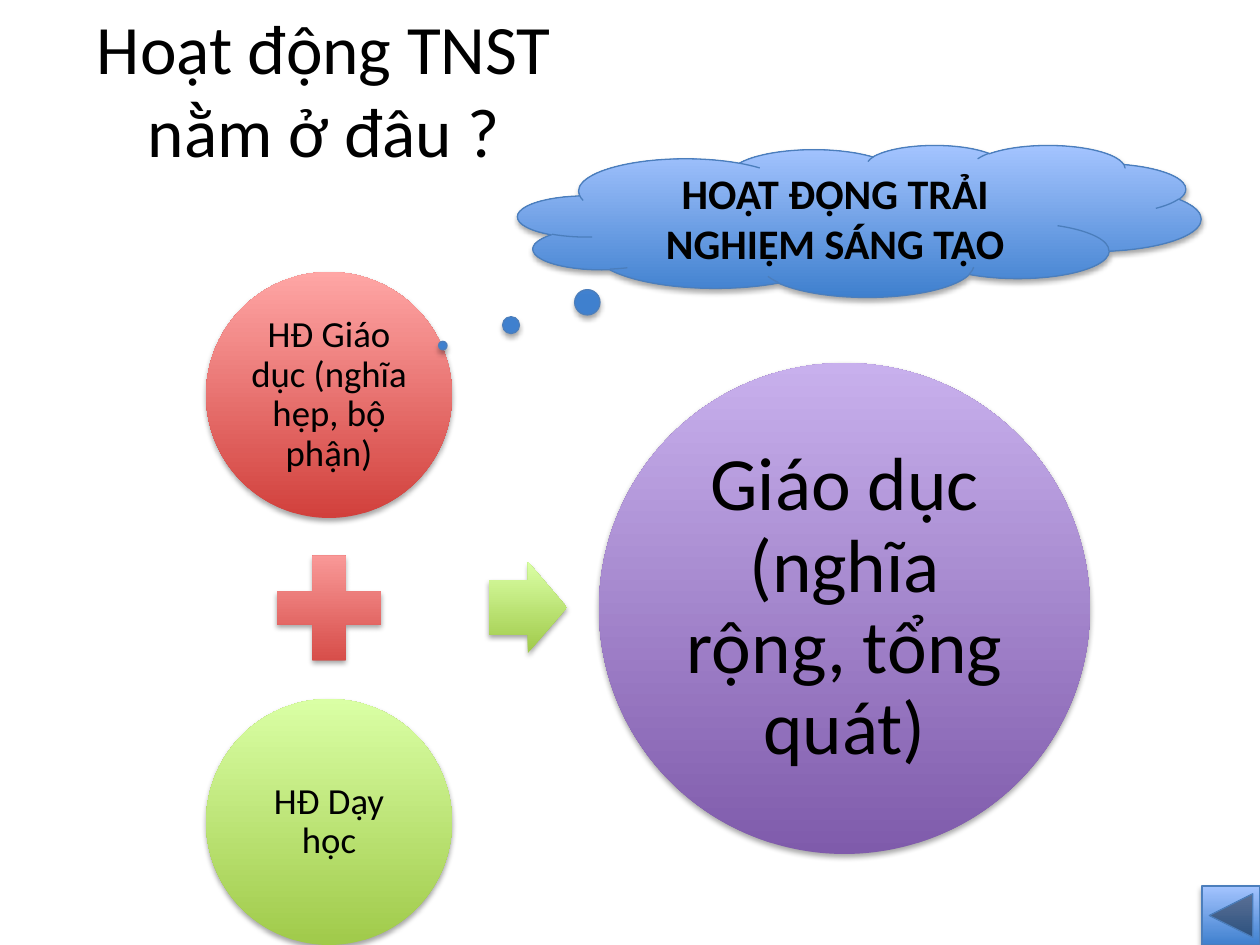
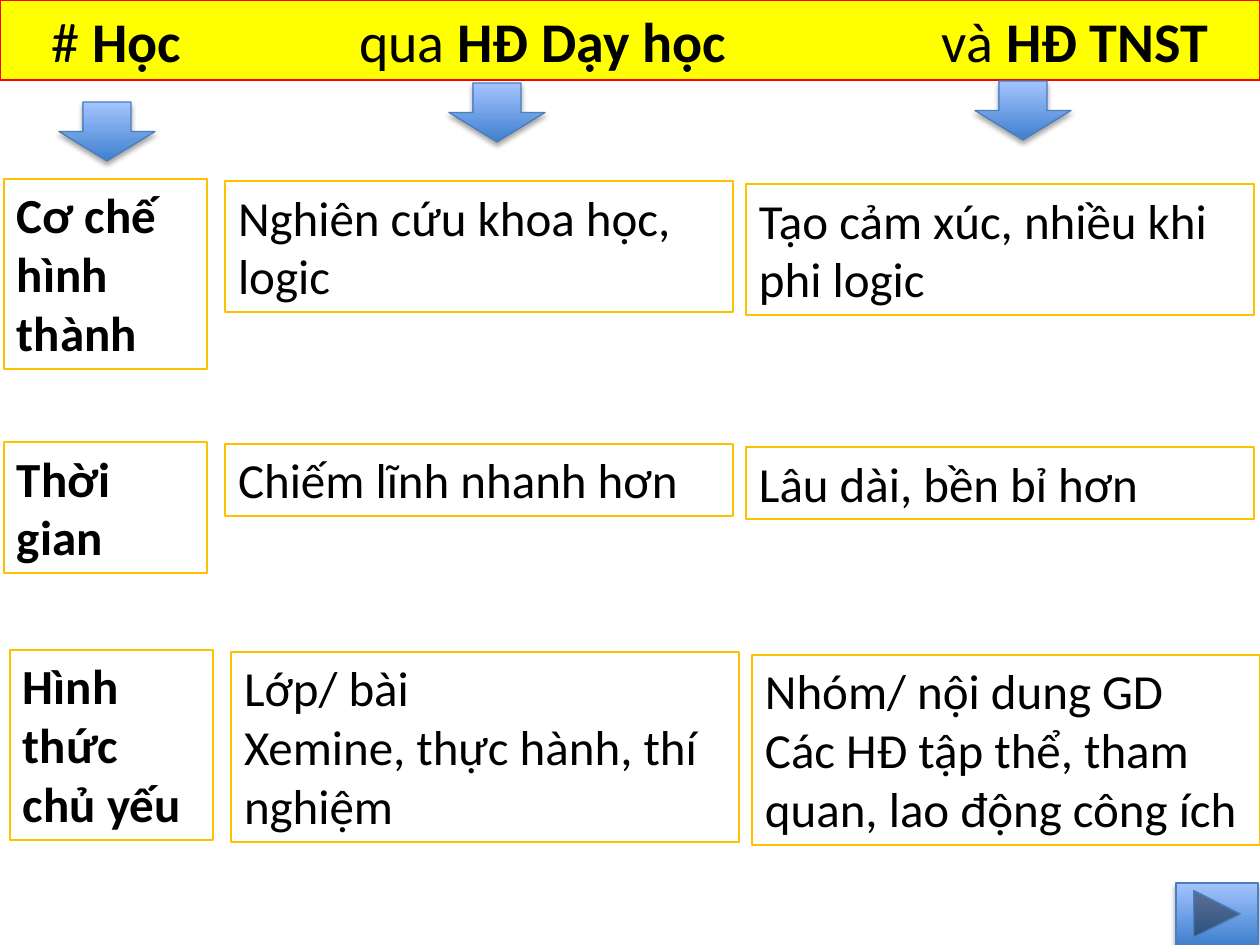
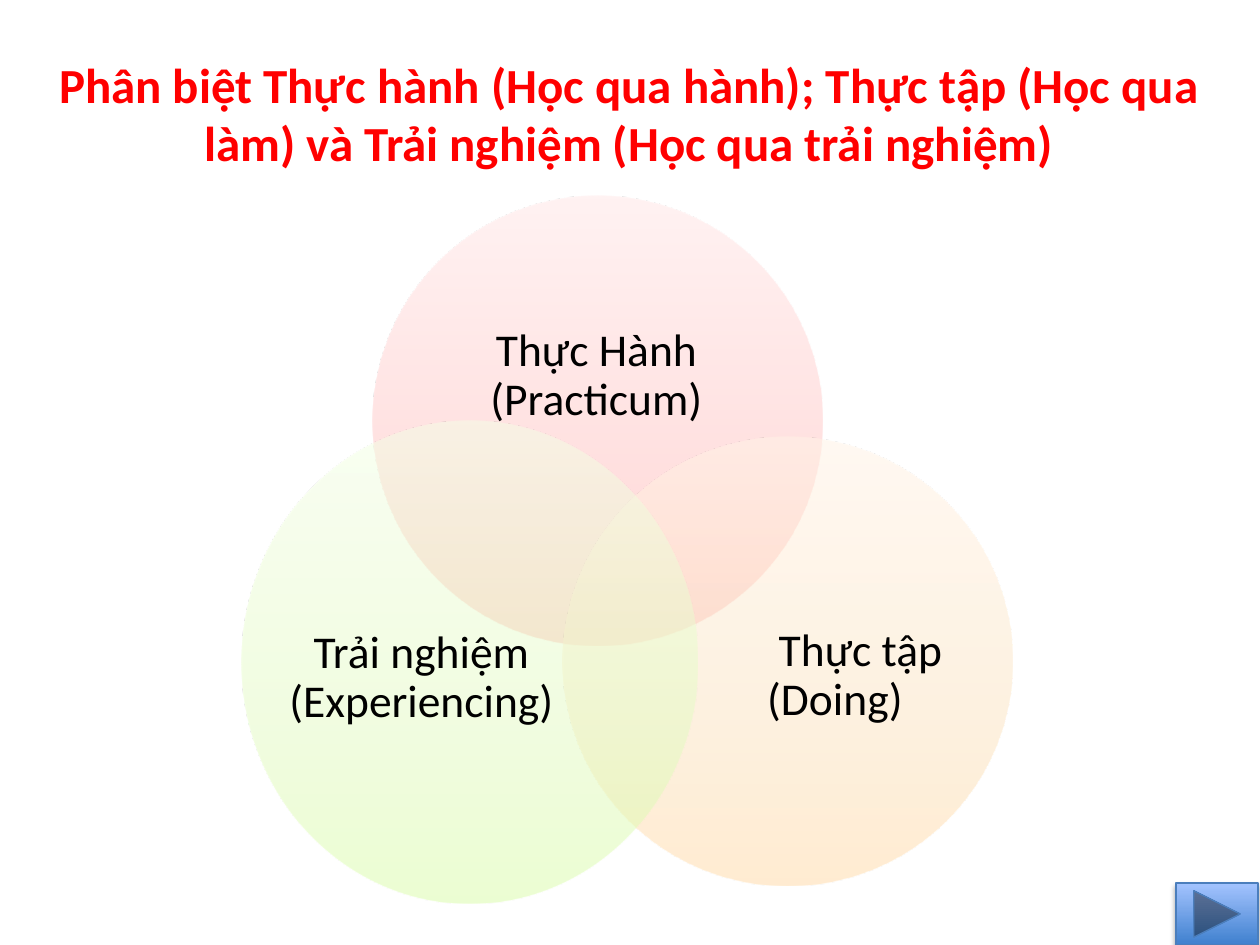
from lxml.etree import SubElement as Sub
from pptx import Presentation
from pptx.dml.color import RGBColor
from pptx.enum.shapes import MSO_SHAPE as Geo
from pptx.enum.text import MSO_ANCHOR as Anchor, MSO_AUTO_SIZE as Fit, PP_ALIGN as Align
from pptx.oxml.ns import qn
from pptx.util import Emu, Pt

COLORS = {
    "text": "000000", "red": "FF0000", "yellow": "FFFF00", "gold": "FFC000",
    "edge": "4B7EBC", "shade": "000000",
}
# Gradient stops run from the bottom of a shape to its top
GRADES = {
    "blue": ("3F80CE", "A4C4FF"),
    "red": ("D1403C", "FFA6A5"),
    "green": ("A0CA4A", "DAFFA5"),
    "violet": ("7F5BAB", "C8B0ED"),
    "pale red": ("FFA6A5", "FFC0BF", "FFE7E7"),
    "pale gold": ("FFDAA5", "FEE4C0", "FFF4E7"),
    "pale green": ("DAFDA7", "E4FCC2", "F5FFE7"),
}
FONT = "Calibri"
PAD = (13, 6, 13, 6)


def px(num):
    return Emu(round(num * 914400 / 126))


def rgb(name):
    return RGBColor.from_string(COLORS[name])


class Deck:
    def __init__(self):
        self.prs = Presentation()
        self.prs.slide_width, self.prs.slide_height = px(1260), px(945)
        self.slide = None

    def page(self):
        self.slide = self.prs.slides.add_slide(self.prs.slide_layouts[5])

    def fill_text(self, item, paras, size, color="text", align=Align.CENTER,
                  anchor=Anchor.MIDDLE, pad=PAD, space=1.0, indent=0, tabs=()):
        """Each paragraph is a list of (text, bold) runs."""
        frame = item.text_frame
        frame.word_wrap, frame.auto_size = True, Fit.NONE
        frame.vertical_anchor = anchor
        (frame.margin_left, frame.margin_top,
         frame.margin_right, frame.margin_bottom) = map(px, pad)
        for num, runs in enumerate(paras):
            para = frame.add_paragraph() if num else frame.paragraphs[0]
            para.alignment, para.line_spacing = align, space
            props = para._p.get_or_add_pPr()
            if indent:
                props.set("marL", "0")
                props.set("indent", str(px(indent)))
            if tabs:
                stops = Sub(props, qn("a:tabLst"))
                for pos in tabs:
                    Sub(stops, qn("a:tab"), pos=str(px(pos)), algn="l")
            for text, bold in runs:
                run = para.add_run()
                run.text = text
                font = run.font
                font.name, font.size, font.bold = FONT, Pt(size), bold
                font.color.rgb = rgb(color)

    def title(self, box, runs, size, **style):
        item = self.slide.shapes.title
        item.left, item.top, item.width, item.height = map(px, box)
        self.fill_text(item, [runs], size, **style)
        return item

    def label(self, box, text, size, **style):
        item = self.slide.shapes.add_textbox(*map(px, box))
        self.fill_text(item, [[(text, False)]], size, **style)

    def shape(self, kind, box, grade=None, line=None, shadow=True, alpha=100):
        item = self.slide.shapes.add_shape(kind, *map(px, box))
        item.shadow.inherit = False
        self.edge(item, line)
        if grade:
            self.blend(item, GRADES[grade], alpha)
        else:
            item.fill.background()
        if shadow:
            self.shade(item)
        return item

    def edge(self, item, color):
        if color:
            item.line.color.rgb, item.line.width = rgb(color), Pt(0.75)
        else:
            item.line.fill.background()

    def blend(self, item, stops, alpha):
        item.fill.gradient()
        item.fill.gradient_angle = 90
        stock = item._element.spPr.find(qn("a:gradFill")).find(qn("a:gsLst"))
        for old in list(stock):
            stock.remove(old)
        spots = (0, 100) if len(stops) == 2 else (0, 35, 100)
        for spot, color in zip(spots, stops):
            stop = Sub(stock, qn("a:gs"), pos=str(spot * 1000))
            tint = Sub(stop, qn("a:srgbClr"), val=color)
            if alpha < 100:
                Sub(tint, qn("a:alpha"), val=str(alpha * 1000))

    def shade(self, item):
        effects = item._element.spPr.find(qn("a:effectLst"))
        cast = Sub(effects, qn("a:outerShdw"), blurRad=str(Pt(3.1)),
                   dist=str(Pt(1.8)), dir="5400000", rotWithShape="0")
        tint = Sub(cast, qn("a:srgbClr"), val=COLORS["shade"])
        Sub(tint, qn("a:alpha"), val="35000")

    def disc(self, box, grade, text, size, pad):
        item = self.shape(Geo.OVAL, box, grade)
        self.fill_text(item, [[(text, False)]], size, pad=(pad,) * 4, space=0.9)

    def cell(self, box, lines, bold):
        item = self.shape(Geo.RECTANGLE, box, line="gold", shadow=False)
        self.fill_text(item, [[(text, bold)] for text in lines], 28,
                       align=Align.LEFT, anchor=Anchor.TOP)

    def forward(self):
        self.shape(Geo.ACTION_BUTTON_FORWARD_OR_NEXT, (1176, 883, 82, 62), "blue", "edge")


def place(deck):
    deck.page()
    deck.title((14, 9, 620, 158), [("Hoạt động TNST nằm ở đâu ?", False)], 39.6)

    # Sum of two activities
    deck.disc((206, 272, 246, 246), "red", "HĐ Giáo dục (nghĩa hẹp, bộ phận)", 21, 4)
    deck.shape(Geo.MATH_PLUS, (258, 537, 142, 142), "red")
    deck.disc((206, 699, 246, 246), "green", "HĐ Dạy học", 21, 4)
    arrow = deck.shape(Geo.RIGHT_ARROW, (489, 562, 78, 91), "green")
    arrow.adjustments[0], arrow.adjustments[1] = 0.6, 0.5
    deck.disc((599, 363, 491, 491), "violet", "Giáo dục (nghĩa rộng, tổng quát)", 43, 8)

    # Thought cloud
    cloud = deck.shape(Geo.CLOUD_CALLOUT, (518, 145, 683, 152), "blue", "edge")
    cloud.adjustments[0], cloud.adjustments[1] = -0.61, 0.82
    deck.fill_text(cloud, [[("HOẠT ĐỘNG TRẢI NGHIỆM SÁNG TẠO", True)]], 24)
    deck.shape(Geo.ACTION_BUTTON_BACK_OR_PREVIOUS, (1202, 886, 58, 59), "blue", "edge")


def compare(deck):
    deck.page()
    # Heading band with one tab stop per column
    band = deck.title(
        (0, 0, 1260, 80),
        [("# ", False), ("Học", True), ("\tqua ", False), ("HĐ Dạy học", True),
         ("\tvà ", False), ("HĐ TNST", True)],
        32, align=Align.LEFT, anchor=Anchor.TOP, pad=(52, 6, 13, 6), tabs=(307, 890))
    band.fill.solid()
    band.fill.fore_color.rgb = rgb("yellow")
    deck.edge(band, "red")
    for left, top in ((59, 102), (449, 83), (975, 81)):
        deck.shape(Geo.DOWN_ARROW, (left, top, 96, 59), "blue", "edge")

    # Rows: left shift, top, then (line count, paragraphs) per column
    cols = ((4, 203), (225, 508), (746, 508))
    rows = (
        (0, 179, (3, ["Cơ chế hình thành"]),
         (2, ["Nghiên cứu khoa học, logic"]),
         (2, ["Tạo cảm xúc, nhiều khi phi logic"])),
        (0, 442, (2, ["Thời gian"]),
         (1, ["Chiếm lĩnh nhanh hơn"]),
         (1, ["Lâu dài, bền bỉ hơn"])),
        (6, 650, (3, ["Hình thức chủ yếu"]),
         (3, ["Lớp/ bài", "Xemine, thực hành, thí nghiệm"]),
         (3, ["Nhóm/ nội dung GD", "Các HĐ tập thể, tham quan, lao động công ích"])),
    )
    for shift, top, *cells in rows:
        for num, ((left, width), (count, lines)) in enumerate(zip(cols, cells)):
            box = (left + shift, top + num * 5 // 2, width, 13 + 59 * count)
            deck.cell(box, lines, num == 0)
    deck.forward()


def circles(deck):
    deck.page()
    deck.title((45, 48, 1167, 131),
               [("Phân biệt Thực hành (Học qua hành); Thực tập (Học qua làm) "
                 "và Trải nghiệm (Học qua trải nghiệm)", True)],
               28, color="red", anchor=Anchor.TOP)

    # Overlapping circles: circle, colour, label place, label, first-line indent
    rings = (
        ((373, 196, 449, 449), "pale red", (432, 275, 329, 202), "Thực Hành (Practicum)", 0),
        ((563, 437, 449, 449), "pale gold", (701, 553, 268, 247), "Thực tập (Doing)", 51),
        ((242, 421, 455, 483), "pale green", (285, 545, 273, 266),
         "Trải nghiệm (Experiencing)", 0),
    )
    for ring, grade, spot, text, indent in rings:
        deck.shape(Geo.OVAL, ring, grade, shadow=False, alpha=50)
        deck.label(spot, text, 26, pad=(0,) * 4, space=0.9, indent=indent)
    deck.forward()


def main():
    deck = Deck()
    for build in (place, compare, circles):
        build(deck)
    deck.prs.save("out.pptx")


if __name__ == "__main__":
    main()
